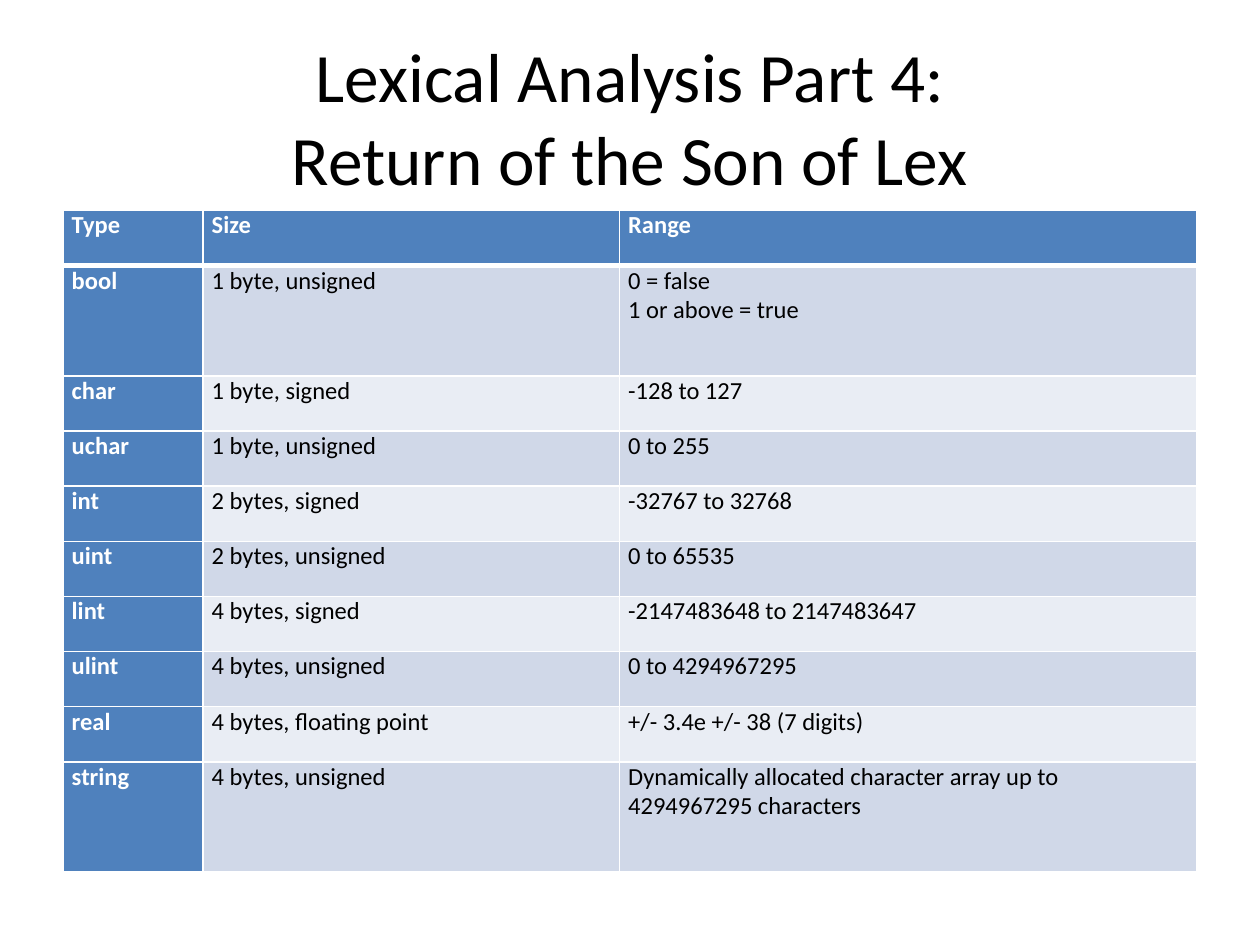
from typing import NamedTuple

from lxml.etree import SubElement
from pptx import Presentation
from pptx.dml.color import RGBColor
from pptx.enum.text import MSO_ANCHOR, PP_ALIGN
from pptx.oxml.ns import qn
from pptx.slide import Slide
from pptx.table import _Cell
from pptx.text.text import _Paragraph
from pptx.util import Pt

FONT = "Calibri"
BLACK = RGBColor(0x00, 0x00, 0x00)
WHITE = RGBColor(0xFF, 0xFF, 0xFF)
BLUE = RGBColor(0x4F, 0x81, 0xBD)
DARK_BAND = RGBColor(0xD0, 0xD8, 0xE8)
LIGHT_BAND = RGBColor(0xE9, 0xED, 0xF4)

LEFT, CONTENT_WIDTH = 36, 648
COLUMN_WIDTHS = (80, 238, 330)
ROW_HEIGHT = 31.5


class DataType(NamedTuple):
    name: str
    size: str
    value_range: tuple[str, ...]
    height_units: int = 1


TITLE_LINES = ("Lexical Analysis Part 4:", "Return of the Son of Lex")
TABLE_ROWS = (
    DataType("Type", "Size", ("Range",)),
    DataType("bool", "1 byte, unsigned", ("0 = false", "1 or above = true"), 2),
    DataType("char", "1 byte, signed", ("-128 to 127",)),
    DataType("uchar", "1 byte, unsigned", ("0 to 255",)),
    DataType("int", "2 bytes, signed", ("-32767 to 32768",)),
    DataType("uint", "2 bytes, unsigned", ("0 to 65535",)),
    DataType("lint", "4 bytes, signed", ("-2147483648 to 2147483647",)),
    DataType("ulint", "4 bytes, unsigned", ("0 to 4294967295",)),
    DataType("real", "4 bytes, floating point", ("+/- 3.4e +/- 38 (7 digits)",)),
    DataType(
        "string",
        "4 bytes, unsigned",
        ("Dynamically allocated character array up to 4294967295 characters",),
        2,
    ),
)


def add_run(paragraph: _Paragraph, text: str, size: float,
            color: RGBColor = BLACK, bold: bool = False) -> None:
    run = paragraph.add_run()
    run.text = text
    run.font.name = FONT
    run.font.size = Pt(size)
    run.font.bold = bold
    run.font.color.rgb = color


def add_title(slide: Slide) -> None:
    shape = slide.shapes.add_textbox(Pt(LEFT), Pt(21.6), Pt(CONTENT_WIDTH), Pt(90))
    frame = shape.text_frame
    frame.word_wrap = True
    frame.vertical_anchor = MSO_ANCHOR.MIDDLE
    paragraph = frame.paragraphs[0]
    paragraph.alignment = PP_ALIGN.CENTER
    for index, line in enumerate(TITLE_LINES):
        if index:
            paragraph.add_line_break()
        add_run(paragraph, line, 39.6)


def add_borders(cell: _Cell, top: float, bottom: float) -> None:
    properties = cell._tc.get_or_add_tcPr()
    for side, width in (("L", 1), ("R", 1), ("T", top), ("B", bottom)):
        line = SubElement(properties, qn(f"a:ln{side}"), w=str(Pt(width)))
        fill = SubElement(line, qn("a:solidFill"))
        SubElement(fill, qn("a:srgbClr"), val=str(WHITE))


def fill_cell(cell: _Cell, lines: tuple[str, ...], row: int, column: int) -> None:
    is_heading = row == 0 or column == 0
    # Borders come before the fill in the cell properties
    add_borders(cell, top=3 if row == 1 else 1, bottom=3 if row == 0 else 1)
    cell.fill.solid()
    band = DARK_BAND if row % 2 else LIGHT_BAND
    cell.fill.fore_color.rgb = BLUE if is_heading else band
    cell.margin_left = cell.margin_right = Pt(5)
    cell.margin_top = cell.margin_bottom = Pt(0)
    frame = cell.text_frame
    for index, line in enumerate(lines):
        paragraph = frame.add_paragraph() if index else frame.paragraphs[0]
        add_run(paragraph, line, 14, WHITE if is_heading else BLACK, is_heading)


def add_type_table(slide: Slide) -> None:
    height = ROW_HEIGHT * sum(data_type.height_units for data_type in TABLE_ROWS)
    table = slide.shapes.add_table(
        len(TABLE_ROWS), len(COLUMN_WIDTHS),
        Pt(LEFT), Pt(120.4), Pt(CONTENT_WIDTH), Pt(height),
    ).table
    table.first_col = True
    for column, width in zip(table.columns, COLUMN_WIDTHS):
        column.width = Pt(width)
    for row, data_type in enumerate(TABLE_ROWS):
        table.rows[row].height = Pt(ROW_HEIGHT * data_type.height_units)
        contents = ((data_type.name,), (data_type.size,), data_type.value_range)
        for column, lines in enumerate(contents):
            fill_cell(table.cell(row, column), lines, row, column)


def main() -> None:
    presentation = Presentation()
    presentation.slide_width = Pt(720)
    presentation.slide_height = Pt(540)
    slide = presentation.slides.add_slide(presentation.slide_layouts[6])

    # Heading
    add_title(slide)
    # Table of data types
    add_type_table(slide)

    presentation.save("out.pptx")


if __name__ == "__main__":
    main()
